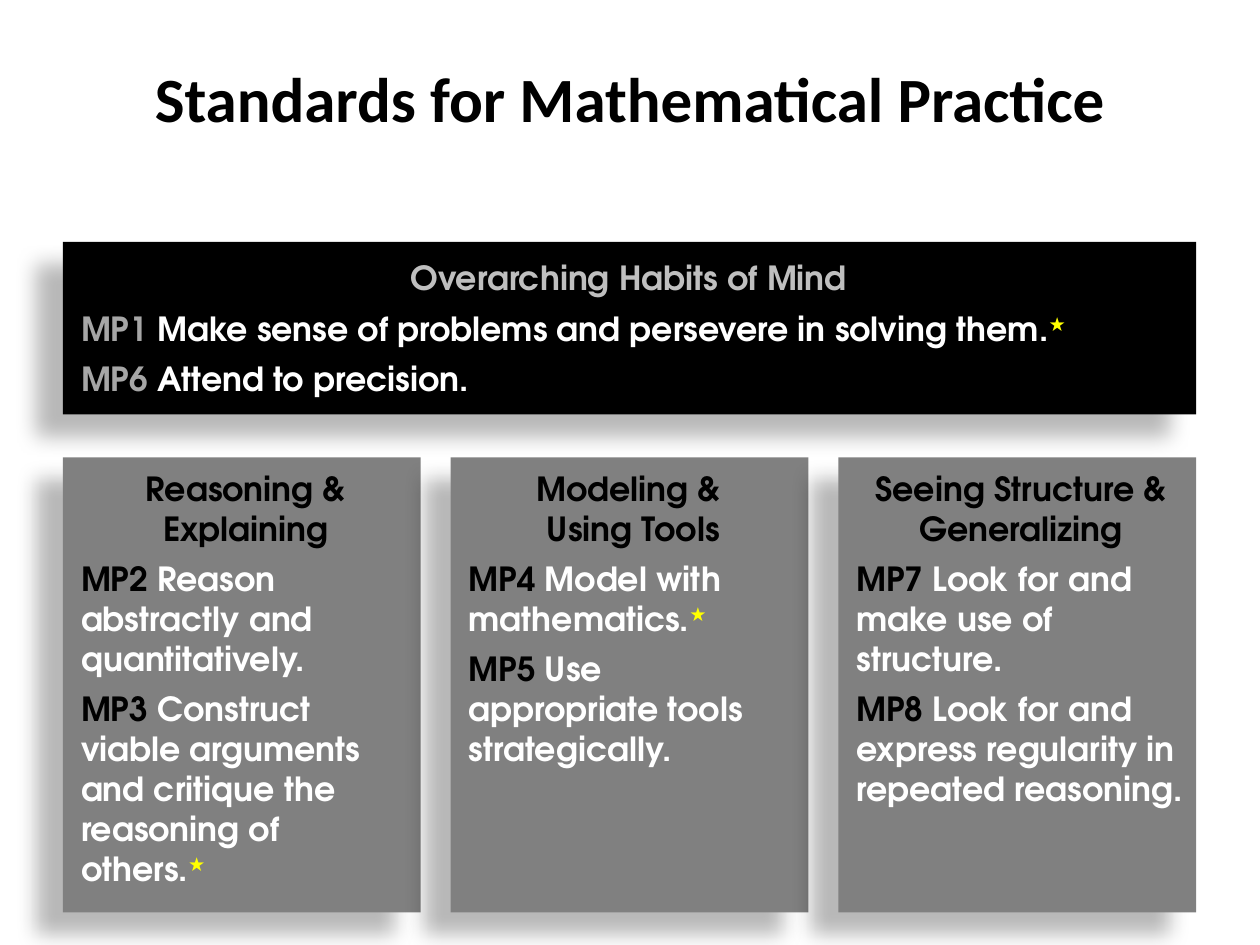
from dataclasses import dataclass

from lxml import etree
from pptx import Presentation
from pptx.dml.color import RGBColor
from pptx.enum import shapes, text
from pptx.oxml import ns
from pptx.util import Pt


@dataclass(frozen=True)
class Theme:
    title_font: str = "Calibri"
    body_font: str = "TeX Gyre Adventor"
    title_size: int = 36
    body_size: int = 19
    black: str = "000000"
    white: str = "FFFFFF"
    panel: str = "808080"
    light: str = "BFBFBF"
    code: str = "A6A6A6"
    star: str = "FFFF00"


THEME = Theme()
LEFT, WIDTH, GAP = 36, 647.5, 17.1
INSET, INDENT, SPACE_AFTER = 6, 4.3, 6

# Each practice: code, wording, starred
HABITS = [
    ("MP1", "Make sense of problems and persevere in solving them.", True),
    ("MP6", "Attend to precision.", False),
]
COLUMNS = [
    (["Reasoning & Explaining"], [
        ("MP2", "Reason abstractly and quantitatively.", False),
        ("MP3", "Construct viable arguments and critique the reasoning of others.", True),
    ]),
    (["Modeling & ", "Using Tools"], [
        ("MP4", "Model with mathematics.", True),
        ("MP5", "Use appropriate tools strategically.", False),
    ]),
    (["Seeing Structure & Generalizing"], [
        ("MP7", "Look for and make use of structure.", False),
        ("MP8", "Look for and express regularity in repeated reasoning.", False),
    ]),
]


def set_title(page, wording):
    title = page.shapes.title
    title.left, title.top, title.width, title.height = Pt(0), Pt(0), Pt(720), Pt(111.6)
    frame = title.text_frame
    frame.text = wording
    frame.vertical_anchor = text.MSO_ANCHOR.MIDDLE
    para = frame.paragraphs[0]
    para.alignment = text.PP_ALIGN.CENTER
    font = para.font
    font.name, font.size, font.bold = THEME.title_font, Pt(THEME.title_size), True
    font.color.rgb = RGBColor.from_string(THEME.black)


def add_shadow(box):
    """Cast a soft shadow towards the lower left."""
    box.shadow.inherit = False
    effects = box._element.spPr.find(ns.qn("a:effectLst"))
    shadow = etree.SubElement(
        effects, ns.qn("a:outerShdw"), blurRad=str(Pt(11.8)), dist=str(Pt(19.7)),
        dir=str(141 * 60000), algn="tl", rotWithShape="0")
    color = etree.SubElement(shadow, ns.qn("a:srgbClr"), val=THEME.black)
    etree.SubElement(color, ns.qn("a:alpha"), val="28000")


def add_span(para, wording, color):
    span = para.add_run()
    span.text = wording
    span.font.color.rgb = RGBColor.from_string(color)
    return span


def add_para(frame, alignment, space_after=SPACE_AFTER):
    """Start a paragraph, using the frame's empty first one if it is free."""
    first = frame.paragraphs[0]
    para = frame.add_paragraph() if first.runs else first
    para.alignment = alignment
    para.space_after = Pt(space_after)
    para.font.name, para.font.size, para.font.bold = THEME.body_font, Pt(THEME.body_size), True
    properties = para._p.get_or_add_pPr()
    properties.set("marL", str(Pt(INDENT)))
    properties.set("indent", "0")
    return para


def add_practice(frame, code, wording, starred, code_color):
    para = add_para(frame, text.PP_ALIGN.LEFT)
    add_span(para, code + " ", code_color)
    add_span(para, wording, THEME.white)
    if starred:
        star = add_span(para, "★", THEME.star)
        star._r.get_or_add_rPr().set("baseline", "30000")


def add_panel(page, bounds, fill, anchor, heading, heading_color, practices, code_color):
    box = page.shapes.add_shape(shapes.MSO_SHAPE.RECTANGLE, *map(Pt, bounds))
    box.fill.solid()
    box.fill.fore_color.rgb = RGBColor.from_string(fill)
    box.line.fill.background()
    add_shadow(box)
    frame = box.text_frame
    frame.word_wrap = True
    frame.vertical_anchor = anchor
    frame.margin_left = frame.margin_right = Pt(INSET)
    frame.margin_top = frame.margin_bottom = Pt(INSET)
    for line in heading:
        space_after = SPACE_AFTER if line == heading[-1] else 0
        para = add_para(frame, text.PP_ALIGN.CENTER, space_after)
        add_span(para, line, heading_color)
    for code, wording, starred in practices:
        add_practice(frame, code, wording, starred, code_color)


def main():
    deck = Presentation()
    deck.slide_width, deck.slide_height = Pt(720), Pt(540)
    page = deck.slides.add_slide(deck.slide_layouts[5])
    set_title(page, "Standards for Mathematical Practice")

    add_panel(page, (LEFT, 138.2, WIDTH, 98.6), THEME.black, text.MSO_ANCHOR.MIDDLE,
              ["Overarching Habits of Mind "], THEME.light, HABITS, THEME.code)

    column_width = (WIDTH - GAP * (len(COLUMNS) - 1)) / len(COLUMNS)
    for index, (heading, practices) in enumerate(COLUMNS):
        left = LEFT + index * (column_width + GAP)
        add_panel(page, (left, 261.4, column_width, 260), THEME.panel, text.MSO_ANCHOR.TOP,
                  heading, THEME.black, practices, THEME.black)

    deck.save("out.pptx")


if __name__ == "__main__":
    main()
